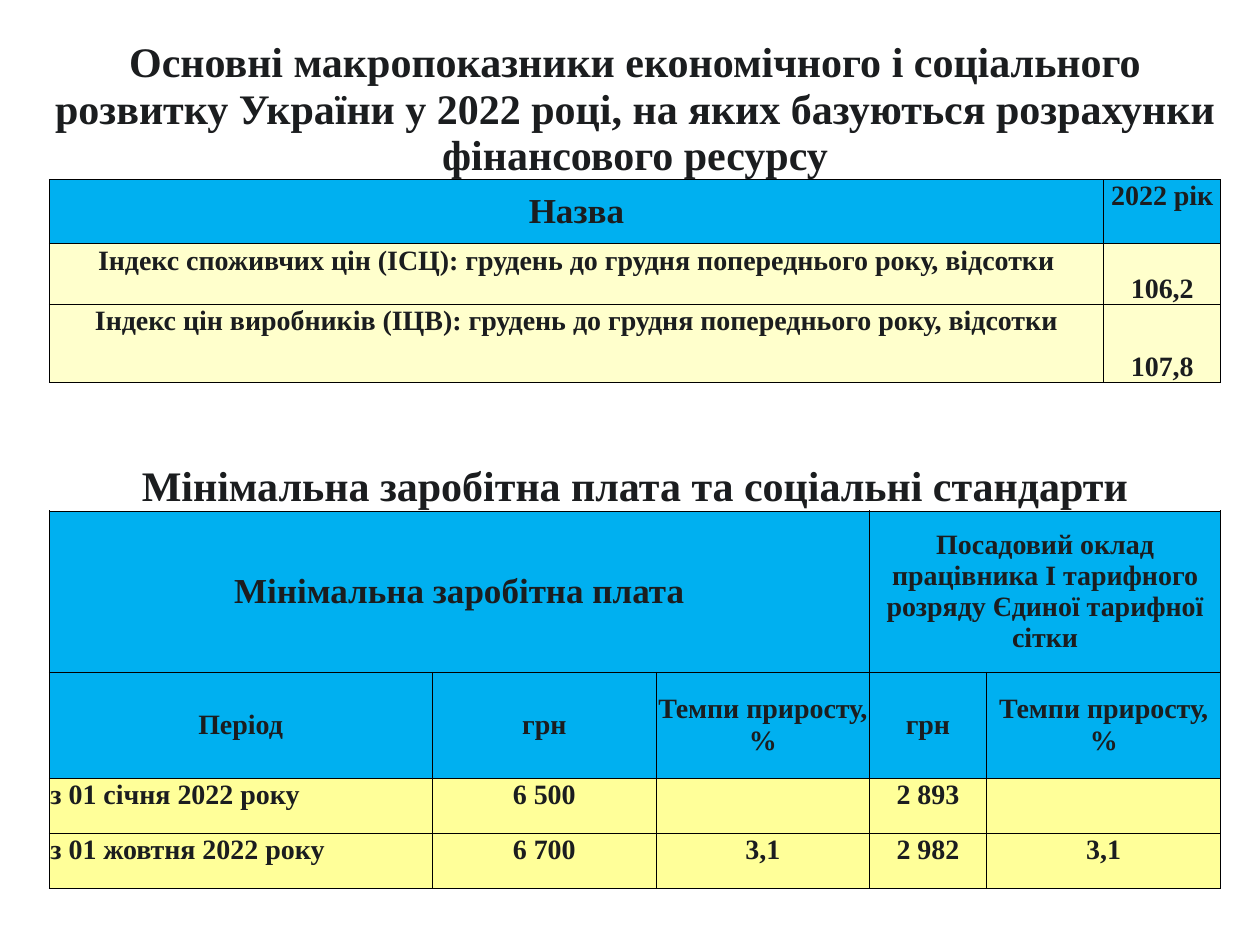
from lxml import etree
from pptx import Presentation
from pptx.dml.color import RGBColor
from pptx.enum.text import MSO_ANCHOR, PP_ALIGN
from pptx.oxml.ns import qn
from pptx.util import Inches, Pt

INK = RGBColor(0x1B, 0x1D, 0x1F)
BLUE = RGBColor(0x00, 0xB0, 0xF0)
CREAM = RGBColor(0xFF, 0xFF, 0xCC)
YELLOW = RGBColor(0xFF, 0xFF, 0x99)
BORDER = RGBColor(0x00, 0x00, 0x00)

TOP, MIDDLE, BOTTOM = MSO_ANCHOR.TOP, MSO_ANCHOR.MIDDLE, MSO_ANCHOR.BOTTOM

COLUMN_WIDTHS = [3.04, 1.78, 1.69, 0.93, 0.93, 0.93]
ROW_HEIGHTS = [0.83, 0.51, 0.48, 0.62, 1.02, 1.28, 0.84, 0.44, 0.44]

# Each row: fill, then cells of (text, columns spanned, size, anchor)
ROWS = [
    (None, [("Основні макропоказники економічного і соціального розвитку України у 2022 році, "
             "на яких базуються розрахунки фінансового ресурсу", 6, 24, BOTTOM)]),
    (BLUE, [("Назва", 5, 20, MIDDLE), ("2022 рік", 1, 16, TOP)]),
    (CREAM, [("Індекс споживчих цін (ІСЦ): грудень до грудня попереднього року, відсотки", 5, 16, TOP),
             ("106,2", 1, 16, BOTTOM)]),
    (CREAM, [("Індекс цін виробників (ІЦВ): грудень до грудня попереднього року, відсотки", 5, 16, TOP),
             ("107,8", 1, 16, BOTTOM)]),
    (None, [("Мінімальна заробітна плата та соціальні стандарти", 6, 24, BOTTOM)]),
    (BLUE, [("Мінімальна заробітна плата", 3, 20, MIDDLE),
            ("Посадовий оклад працівника І тарифного розряду Єдиної тарифної сітки", 3, 16, MIDDLE)]),
    (BLUE, [("Період", 1, 16, MIDDLE), ("грн", 1, 16, MIDDLE), ("Темпи приросту, %", 1, 16, MIDDLE),
            ("грн", 1, 16, MIDDLE), ("Темпи приросту, %", 2, 16, MIDDLE)]),
    (YELLOW, [("з 01 січня 2022 року", 1, 16, TOP), ("6 500", 1, 16, TOP), ("", 1, 16, TOP),
              ("2 893", 1, 16, TOP), ("", 2, 16, TOP)]),
    (YELLOW, [("з 01 жовтня 2022 року", 1, 16, TOP), ("6 700", 1, 16, TOP), ("3,1", 1, 16, TOP),
              ("2 982", 1, 16, TOP), ("3,1", 2, 16, TOP)]),
]


def set_borders(cell, visible_sides):
    """Draw a thin line on the given sides (letters of LRTB) and none on the others."""
    properties = cell._tc.get_or_add_tcPr()
    for side in "LRTB":
        line = etree.SubElement(properties, qn(f"a:ln{side}"), w=str(Pt(0.5)))
        if side in visible_sides:
            fill = etree.SubElement(line, qn("a:solidFill"))
            etree.SubElement(fill, qn("a:srgbClr"), val=str(BORDER))
        else:
            etree.SubElement(line, qn("a:noFill"))


prs = Presentation()
prs.slide_width, prs.slide_height = Inches(10), Inches(7.5)
slide = prs.slides.add_slide(prs.slide_layouts[6])

table = slide.shapes.add_table(
    len(ROW_HEIGHTS), len(COLUMN_WIDTHS), Inches(0.39), Inches(0.31),
    Inches(sum(COLUMN_WIDTHS)), Inches(sum(ROW_HEIGHTS))).table
table.first_row = table.horz_banding = False
for column, width in zip(table.columns, COLUMN_WIDTHS):
    column.width = Inches(width)
for row, height in zip(table.rows, ROW_HEIGHTS):
    row.height = Inches(height)

for row_index, (row_fill, entries) in enumerate(ROWS):
    if row_fill:
        sides = "LRTB"
    else:
        sides = "TB" if row_index else "B"
    for cell in table.rows[row_index].cells:
        set_borders(cell, sides)
        if row_fill:
            cell.fill.solid()
            cell.fill.fore_color.rgb = row_fill
        else:
            cell.fill.background()

    column_index = 0
    for text, span, size, anchor in entries:
        cell = table.cell(row_index, column_index)
        if span > 1:
            cell.merge(table.cell(row_index, column_index + span - 1))
        cell.vertical_anchor = anchor
        cell.margin_left = cell.margin_right = cell.margin_top = Inches(0.01)
        cell.margin_bottom = Inches(0 if anchor == BOTTOM else 0.01)
        cell.text = text
        paragraph = cell.text_frame.paragraphs[0]
        is_period = row_fill == YELLOW and column_index == 0
        paragraph.alignment = PP_ALIGN.LEFT if is_period else PP_ALIGN.CENTER
        font = paragraph.font
        font.name, font.size, font.bold = "Times New Roman", Pt(size), True
        font.color.rgb = INK
        column_index += span

prs.save("out.pptx")
